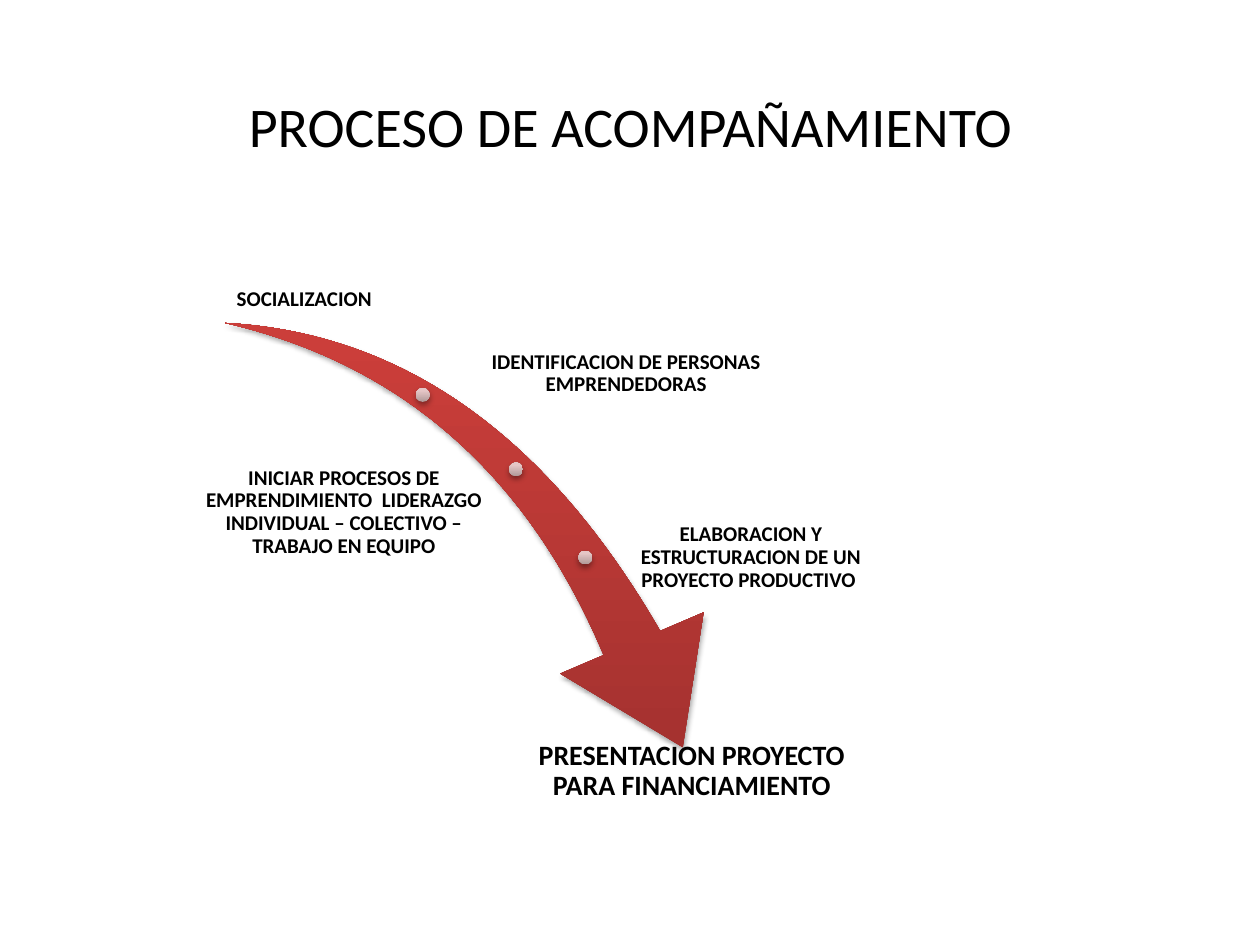
"""Build the slide on the accompaniment process with its swoosh arrow."""
from lxml import etree
from pptx import Presentation
from pptx.dml.color import RGBColor
from pptx.enum.shapes import MSO_SHAPE
from pptx.enum.text import MSO_ANCHOR, PP_ALIGN
from pptx.oxml import parse_xml
from pptx.oxml.ns import nsdecls, qn
from pptx.util import Inches, Pt

SWOOSH, DOT = MSO_SHAPE.SWOOSH_ARROW, MSO_SHAPE.OVAL
TOP, MIDDLE, BOTTOM = MSO_ANCHOR.TOP, MSO_ANCHOR.MIDDLE, MSO_ANCHOR.BOTTOM
CENTER = PP_ALIGN.CENTER

BLACK = RGBColor(0x00, 0x00, 0x00)
RED_STOPS = [
    (0, RGBColor(0x9C, 0x2F, 0x2D)),
    (80, RGBColor(0xCB, 0x3E, 0x3A)),
    (100, RGBColor(0xCE, 0x3B, 0x37)),
]
PINK_STOPS = [
    (0, RGBColor(0xB0, 0x99, 0x98)),
    (80, RGBColor(0xE5, 0xC6, 0xC6)),
    (100, RGBColor(0xE6, 0xC7, 0xC6)),
]

FONT = "Calibri"
TITLE = "PROCESO DE ACOMPAÑAMIENTO"
STEP_HEIGHT = 0.79
STEPS = [
    ("SOCIALIZACION", 1.41, 1.7, 2.01, BOTTOM, 12),
    ("IDENTIFICACION DE PERSONAS EMPRENDEDORAS", 3.5, 2.57, 2.94, MIDDLE, 12),
    ("INICIAR PROCESOS DE EMPRENDIMIENTO  LIDERAZGO INDIVIDUAL – COLECTIVO – "
     "TRABAJO EN EQUIPO", 1.56, 3.67, 2.34, MIDDLE, 12),
    ("ELABORACION Y ESTRUCTURACION DE UN PROYECTO PRODUCTIVO ",
     5.06, 4.03, 1.8, MIDDLE, 12),
    ("PRESENTACION PROYECTO PARA FINANCIAMIENTO", 4.13, 5.86, 2.72, TOP, 16),
]
ARROW = (1.69, 2.69, 4.27, 2.98)
ARROW_ROTATION = 73.3
ARROW_ADJUSTMENTS = (0.163, 0.314)
DOT_SIZE = 0.11
DOTS = [(3.3, 3.08), (4.04, 3.67), (4.59, 4.37)]


def add_text(page, text, place, size, anchor, bold=False, inset=0.1, spacing=1.0):
    box = page.shapes.add_textbox(*map(Inches, place))
    frame = box.text_frame
    frame.word_wrap = True
    frame.vertical_anchor = anchor
    frame.margin_left = frame.margin_right = Inches(inset)
    frame.margin_top = frame.margin_bottom = Inches(min(inset, 0.05))
    para = frame.paragraphs[0]
    para.alignment = CENTER
    para.line_spacing = spacing
    span = para.add_run()
    span.text = text
    span.font.name = FONT
    span.font.size = Pt(size)
    span.font.bold = bold
    span.font.color.rgb = BLACK


def add_shaded(page, kind, place, stops):
    shape = page.shapes.add_shape(kind, *map(Inches, place))
    shape.line.fill.background()
    shape.shadow.inherit = False
    properties = shape._element.spPr
    stop_xml = "".join(
        f'<a:gs pos="{position * 1000}"><a:srgbClr val="{color}"/></a:gs>'
        for position, color in stops
    )
    gradient = parse_xml(
        f'<a:gradFill {nsdecls("a")} rotWithShape="0"><a:gsLst>{stop_xml}</a:gsLst>'
        '<a:lin ang="16200000" scaled="0"/></a:gradFill>'
    )
    properties.find(qn("a:prstGeom")).addnext(gradient)
    shadow = etree.SubElement(
        properties.find(qn("a:effectLst")), qn("a:outerShdw"),
        blurRad=str(Pt(3.1)), dist=str(Pt(1.8)), dir="5400000", rotWithShape="0",
    )
    color = etree.SubElement(shadow, qn("a:srgbClr"), val=str(BLACK))
    etree.SubElement(color, qn("a:alpha"), val="35000")
    return shape


def main():
    deck = Presentation()
    deck.slide_width, deck.slide_height = Inches(10), Inches(7.5)
    page = deck.slides.add_slide(deck.slide_layouts[6])

    add_text(page, TITLE, (0.51, 0.44, 8.99, 1.11), 32, MIDDLE)

    arrow = add_shaded(page, SWOOSH, ARROW, RED_STOPS)
    arrow.rotation = ARROW_ROTATION
    for index, value in enumerate(ARROW_ADJUSTMENTS):
        arrow.adjustments[index] = value

    for left, top in DOTS:
        add_shaded(page, DOT, (left, top, DOT_SIZE, DOT_SIZE), PINK_STOPS)

    for text, left, top, width, anchor, size in STEPS:
        add_text(page, text, (left, top, width, STEP_HEIGHT), size, anchor,
                 bold=True, inset=0.02, spacing=0.9)

    deck.save("out.pptx")


if __name__ == "__main__":
    main()
